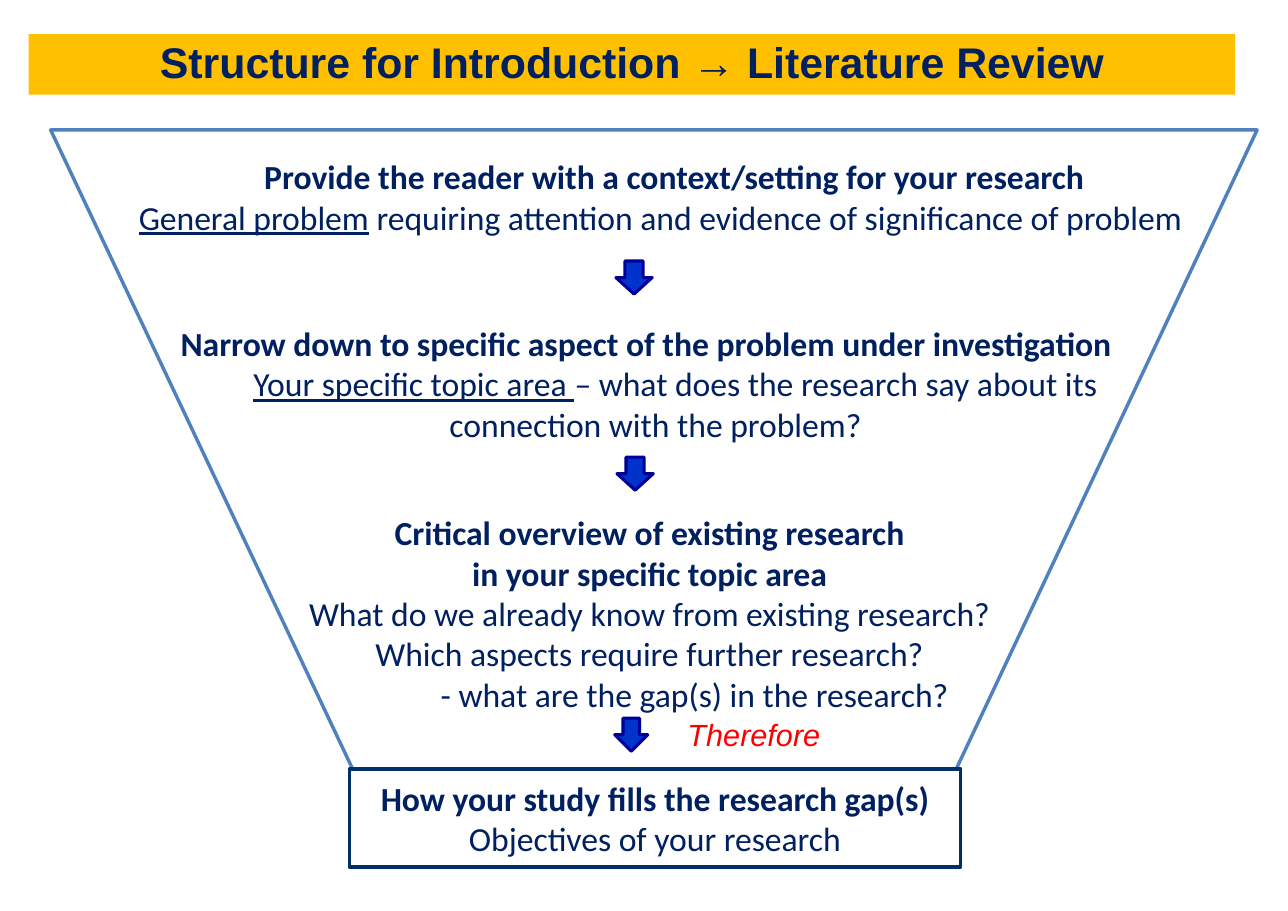
"""Builds the funnel slide on structuring an introduction and literature review."""
from typing import NamedTuple

from pptx import Presentation
from pptx.dml.color import RGBColor
from pptx.enum.shapes import MSO_SHAPE
from pptx.enum.text import MSO_ANCHOR, PP_ALIGN
from pptx.util import Pt

PX = 9144
NAVY = RGBColor(0x00, 0x20, 0x60)
GOLD = RGBColor(0xFF, 0xC0, 0x00)
RED = RGBColor(0xFF, 0x00, 0x00)
FUNNEL_BLUE = RGBColor(0x4F, 0x81, 0xBD)
FRAME_BLUE = RGBColor(0x00, 0x31, 0x64)
ARROW_FILL = RGBColor(0x00, 0x33, 0xCC)
ARROW_LINE = RGBColor(0x00, 0x00, 0x99)
CENTER, LEFT = PP_ALIGN.CENTER, PP_ALIGN.LEFT
TOP, MIDDLE = MSO_ANCHOR.TOP, MSO_ANCHOR.MIDDLE
RECTANGLE, DOWN_ARROW = MSO_SHAPE.RECTANGLE, MSO_SHAPE.DOWN_ARROW


class Area(NamedTuple):
    left: int
    top: int
    width: int
    height: int

    def emu(self) -> list[int]:
        return [length * PX for length in self]


class Style(NamedTuple):
    font: str
    size: int
    color: RGBColor
    italic: bool = False


class Span(NamedTuple):
    text: str
    bold: bool = False
    underline: bool = False


class Para(NamedTuple):
    spans: list[Span]
    align: PP_ALIGN = CENTER
    margin: int = 0
    indent: int = 0


class Stage(NamedTuple):
    area: Area
    paras: list[Para]
    style: Style


TITLE_STYLE = Style("Arial", 28, NAVY)
BODY_STYLE = Style("Calibri", 22, NAVY)
THEREFORE_STYLE = Style("Arial", 20, RED, italic=True)

TITLE_AREA = Area(26, 31, 1095, 55)
TITLE = [Para([Span("Structure for Introduction ", bold=True), Span("→ "),
               Span("Literature Review", bold=True)])]

FUNNEL = [(46, 118), (320, 698), (868, 698), (1141, 118)]
ARROWS = [Area(559, 237, 33, 30), Area(560, 415, 33, 30), Area(558, 652, 30, 30)]

STAGES = [
    Stage(Area(115, 136, 994, 86), [
        Para([Span("Provide the reader with a context/setting for your research", bold=True)]),
        Para([Span("General problem", underline=True),
              Span(" requiring attention and evidence of significance of problem")], LEFT),
    ], BODY_STYLE),
    Stage(Area(153, 287, 884, 123), [
        Para([Span("Narrow down to specific aspect of the problem under investigation",
                   bold=True)], LEFT),
        Para([Span("Your specific topic area ", underline=True),
              Span("– what does the research say about its connection with the problem?")],
             indent=36),
    ], BODY_STYLE),
    Stage(Area(202, 459, 782, 197), [
        Para([Span("Critical overview of existing research ", bold=True)]),
        Para([Span("in your specific topic area ", bold=True)]),
        Para([Span("What do we already know from existing research? ")]),
        Para([Span("Which aspects require further research? ")]),
        Para([Span("- what are the gap(s) in the research?")], LEFT, margin=187),
    ], BODY_STYLE),
    Stage(Area(613, 644, 165, 45), [Para([Span("Therefore")], LEFT)], THEREFORE_STYLE),
]

OUTCOME_AREA = Area(317, 698, 555, 89)
OUTCOME = [Para([Span("How your study fills the research gap(s)", bold=True)]),
           Para([Span("Objectives of your research")])]


def write(shape, paras: list[Para], style: Style, anchor: MSO_ANCHOR,
          spacing: float = 1.0) -> None:
    """Fill a shape with formatted paragraphs."""
    frame = shape.text_frame
    frame.word_wrap = True
    frame.vertical_anchor = anchor
    frame.margin_left = frame.margin_right = 11 * PX
    frame.margin_top = frame.margin_bottom = 6 * PX
    for index, item in enumerate(paras):
        para = frame.add_paragraph() if index else frame.paragraphs[0]
        para.alignment = item.align
        para.line_spacing = spacing
        properties = para._p.get_or_add_pPr()
        properties.set("marL", str(item.margin * PX))
        properties.set("indent", str(item.indent * PX))
        for span in item.spans:
            run = para.add_run()
            run.text = span.text
            run.font.name = style.font
            run.font.size = Pt(style.size)
            run.font.color.rgb = style.color
            run.font.bold = span.bold
            run.font.italic = style.italic
            run.font.underline = span.underline


def paint(shape, line: RGBColor, width: float, fill: RGBColor | None = None) -> None:
    """Set the outline and fill of a shape and drop its shadow."""
    shape.shadow.inherit = False
    shape.line.color.rgb = line
    shape.line.width = Pt(width)
    if fill is None:
        shape.fill.background()
    else:
        shape.fill.solid()
        shape.fill.fore_color.rgb = fill


def add_title(page) -> None:
    """Place the title on its gold band."""
    title = page.shapes.title
    title.left, title.top, title.width, title.height = TITLE_AREA.emu()
    title.fill.solid()
    title.fill.fore_color.rgb = GOLD
    write(title, TITLE, TITLE_STYLE, MIDDLE, spacing=0.9)


def add_funnel(page) -> None:
    """Draw the funnel outline."""
    builder = page.shapes.build_freeform(*FUNNEL[0], scale=PX)
    builder.add_line_segments(FUNNEL[1:], close=True)
    paint(builder.convert_to_shape(), FUNNEL_BLUE, 2.25)


def main() -> None:
    """Build and save the deck."""
    deck = Presentation()
    deck.slide_width, deck.slide_height = 1169 * PX, 827 * PX
    page = deck.slides.add_slide(deck.slide_layouts[5])
    add_title(page)
    add_funnel(page)
    outcome = page.shapes.add_shape(RECTANGLE, *OUTCOME_AREA.emu())
    paint(outcome, FRAME_BLUE, 2.25)
    write(outcome, OUTCOME, BODY_STYLE, MIDDLE)
    for stage in STAGES:
        box = page.shapes.add_textbox(*stage.area.emu())
        write(box, stage.paras, stage.style, TOP)
    for area in ARROWS:
        arrow = page.shapes.add_shape(DOWN_ARROW, *area.emu())
        paint(arrow, ARROW_LINE, 2, ARROW_FILL)
    deck.save("out.pptx")


if __name__ == "__main__":
    main()
